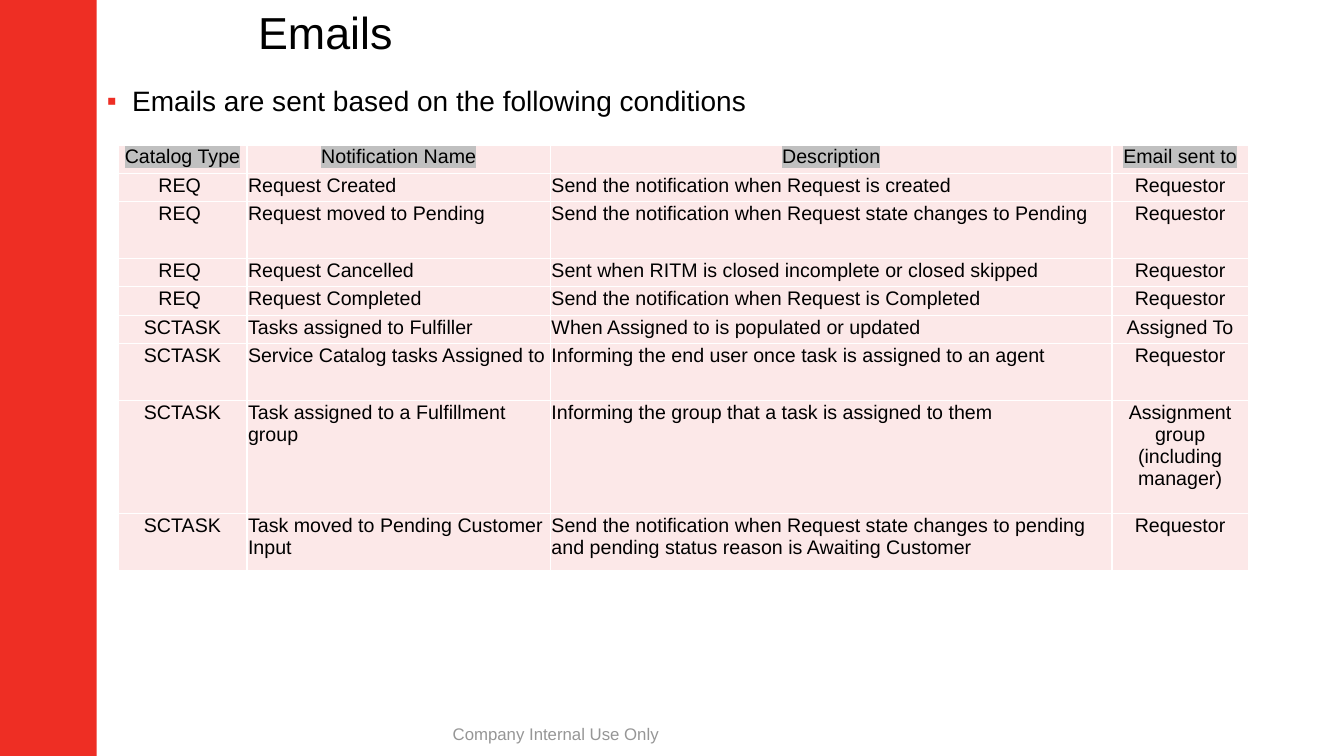
from lxml import etree
from pptx import Presentation
from pptx.dml.color import RGBColor
from pptx.enum.shapes import MSO_SHAPE
from pptx.enum.text import MSO_ANCHOR, MSO_AUTO_SIZE, PP_ALIGN
from pptx.oxml.ns import qn
from pptx.util import Inches, Pt

RECTANGLE = MSO_SHAPE.RECTANGLE
TOP, MIDDLE, BOTTOM = MSO_ANCHOR.TOP, MSO_ANCHOR.MIDDLE, MSO_ANCHOR.BOTTOM
LEFT, CENTER = PP_ALIGN.LEFT, PP_ALIGN.CENTER
NO_AUTOFIT = MSO_AUTO_SIZE.NONE

THEME = {
    "font": "Arial",
    "red": "EE2E24", "black": "000000", "grey": "969696",
    "cell": "FCE8E8", "border": "FFFFFF", "highlight": "C0C0C0",
    "title": 32, "body": 20, "table": 14, "footer": 12,
}


def add_color(parent, tag, color):
    element = etree.SubElement(parent, qn(tag))
    etree.SubElement(element, qn("a:srgbClr"), val=THEME[color])


def write(frame, text, size, color="black", align=LEFT, anchor=TOP,
          line_spacing=1.0, bullet=None, highlight=None, margins=(0, 0, 0, 0)):
    frame.word_wrap = True
    frame.auto_size = NO_AUTOFIT
    frame.vertical_anchor = anchor
    (frame.margin_left, frame.margin_top,
     frame.margin_right, frame.margin_bottom) = map(Inches, margins)
    paragraph = frame.paragraphs[0]
    paragraph.alignment = align
    paragraph.line_spacing = line_spacing
    paragraph.space_before = Pt(0)
    if bullet:
        properties = paragraph._p.get_or_add_pPr()
        properties.set("marL", str(Inches(0.25)))
        properties.set("indent", str(Inches(-0.25)))
        add_color(properties, "a:buClr", "red")
        etree.SubElement(properties, qn("a:buFont"), typeface=THEME["font"])
        etree.SubElement(properties, qn("a:buChar"), char=bullet)
    run = paragraph.add_run()
    run.text = text
    run.font.size = Pt(THEME[size])
    run.font.bold = False
    run.font.color.rgb = RGBColor.from_string(THEME[color])
    if highlight:
        add_color(run.font._element, "a:highlight", highlight)
    run.font.name = THEME["font"]


presentation = Presentation()
presentation.slide_width = Inches(13.33)
presentation.slide_height = Inches(7.5)
slide = presentation.slides.add_slide(presentation.slide_layouts[1])
title, body = slide.placeholders

side_band = slide.shapes.add_shape(RECTANGLE, 0, 0, Inches(0.96), Inches(7.5))
side_band.shadow.inherit = False
side_band.fill.solid()
side_band.fill.fore_color.rgb = RGBColor.from_string(THEME["red"])
side_band.line.fill.background()

title.left, title.top, title.width, title.height = map(Inches, (2.56, 0, 9.1, 0.68))
write(title.text_frame, "Emails", "title", anchor=MIDDLE, line_spacing=0.95)

body.left, body.top, body.width, body.height = map(Inches, (1.06, 0.83, 11.33, 4.09))
write(body.text_frame, "Emails are sent based on the following conditions", "body", bullet="▪")

footer = slide.shapes.add_textbox(*map(Inches, (4.49, 6.86, 6.94, 0.52)))
write(footer.text_frame, "Company Internal Use Only", "footer", color="grey", anchor=BOTTOM)

ROWS = [
    (1, "Catalog Type", "Notification Name", "Description", "Email sent to"),
    (1, "REQ ", "Request Created", "Send the notification when Request is created", "Requestor"),
    (2, "REQ ", "Request moved to Pending",
     "Send the notification when Request state changes to Pending", "Requestor"),
    (1, "REQ ", "Request Cancelled",
     "Sent when RITM is closed incomplete or closed skipped", "Requestor"),
    (1, "REQ ", "Request Completed", "Send the notification when Request is Completed", "Requestor"),
    (1, "SCTASK", "Tasks assigned to Fulfiller",
     "When Assigned to is populated or updated", "Assigned To"),
    (2, "SCTASK", "Service Catalog tasks Assigned to",
     "Informing the end user once task is assigned to an agent", "Requestor"),
    (4, "SCTASK", "Task assigned to a Fulfillment group",
     "Informing the group that a task is assigned to them",
     "Assignment group (including manager)"),
    (2, "SCTASK", "Task moved to Pending Customer Input",
     "Send the notification when Request state changes to pending and pending status "
     "reason is Awaiting Customer", "Requestor"),
]
COLUMN_WIDTHS = (1.28, 3.01, 5.57, 1.35)
TABLE_HEIGHT = Inches(4.22)
total_lines = sum(row[0] for row in ROWS)

table = slide.shapes.add_table(
    len(ROWS), len(COLUMN_WIDTHS), Inches(1.17), Inches(1.44),
    Inches(sum(COLUMN_WIDTHS)), TABLE_HEIGHT).table
for column, width in zip(table.columns, COLUMN_WIDTHS):
    column.width = Inches(width)

for row_index, (lines, *texts) in enumerate(ROWS):
    table.rows[row_index].height = TABLE_HEIGHT * lines // total_lines
    is_header = row_index == 0
    for column_index, text in enumerate(texts):
        cell = table.cell(row_index, column_index)
        centered = is_header or column_index in (0, 3)
        write(cell.text_frame, text, "table", align=CENTER if centered else LEFT,
              highlight="highlight" if is_header else None)
        cell.margin_left = cell.margin_top = cell.margin_right = Inches(0.01)
        cell.margin_bottom = 0
        cell.vertical_anchor = TOP
        properties = cell._tc.get_or_add_tcPr()
        for side in ("a:lnL", "a:lnR", "a:lnT", "a:lnB"):
            border = etree.SubElement(properties, qn(side), w=str(Pt(1)))
            add_color(border, "a:solidFill", "border")
        cell.fill.solid()
        cell.fill.fore_color.rgb = RGBColor.from_string(THEME["cell"])

presentation.save("out.pptx")
